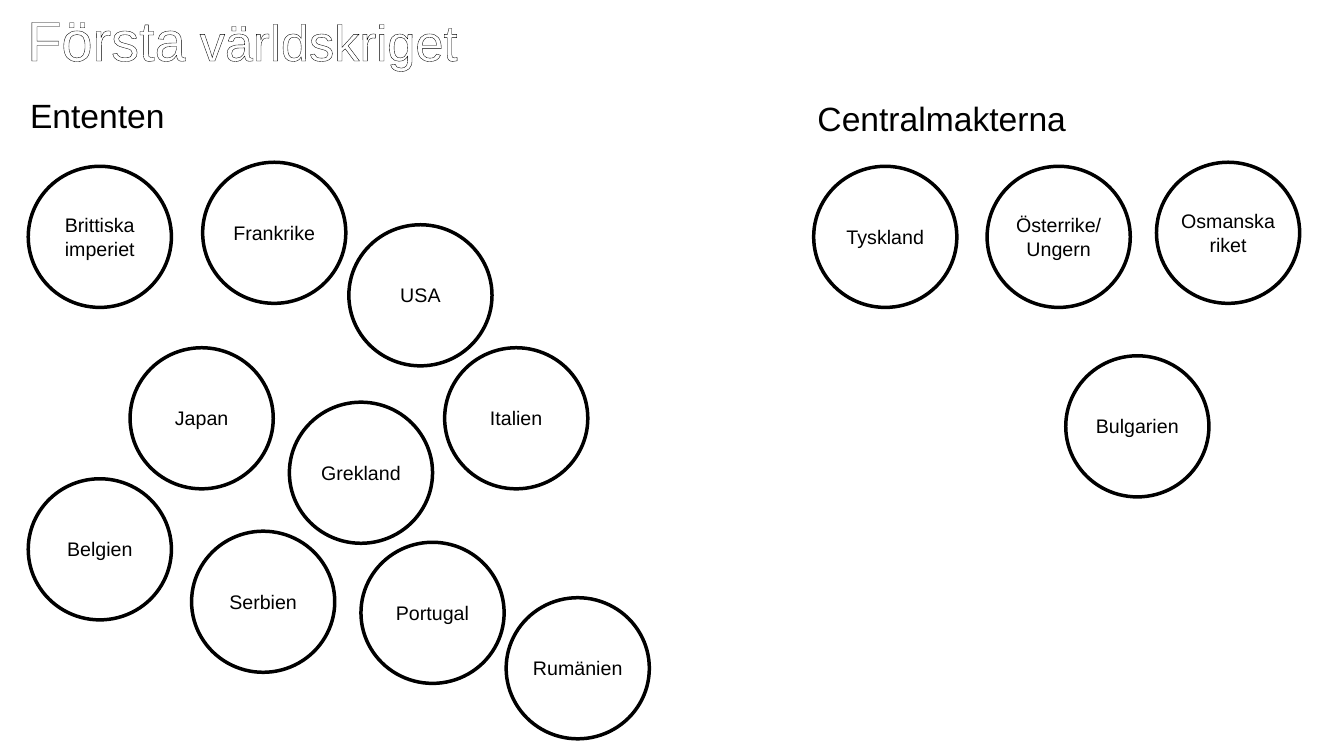
from dataclasses import dataclass

from lxml import etree
from pptx import Presentation
from pptx.dml.color import RGBColor
from pptx.enum.shapes import MSO_SHAPE
from pptx.enum.text import MSO_ANCHOR, MSO_AUTO_SIZE, PP_ALIGN
from pptx.oxml.ns import qn
from pptx.util import Pt

ELLIPSE = MSO_SHAPE.OVAL
TOP = MSO_ANCHOR.TOP
GROW = MSO_AUTO_SIZE.SHAPE_TO_FIT_TEXT
LEFT, CENTER = PP_ALIGN.LEFT, PP_ALIGN.CENTER
EMU_PER_PX = 9144
TITLE_ONLY = 5


@dataclass(frozen=True)
class Theme:
    font: str = "Arial"
    ink: str = "000000"
    paper: str = "FFFFFF"
    title_first: int = 40
    title_rest: int = 36
    heading: int = 24
    label: int = 14
    ring: float = 2.5
    title_outline: float = 0.75


THEME = Theme()
CIRCLE_W, CIRCLE_H = 142, 140
LABEL_HEIGHTS = {1: 34, 2: 57}

HEADINGS = [("Ententen", 20, 89), ("Centralmakterna", 801, 92)]
COUNTRIES = [
    ("Brittiska imperiet", 28, 165, 2),
    ("Frankrike", 201, 161, 1),
    ("USA", 346, 223, 1),
    ("Italien", 441, 345, 1),
    ("Österrike/ Ungern", 979, 165, 2),
    ("Osmanska riket", 1147, 161, 2),
    ("Tyskland", 807, 165, 1),
    ("Bulgarien", 1057, 353, 1),
    ("Rumänien", 502, 593, 1),
    ("Japan", 129, 345, 1),
    ("Serbien", 190, 527, 1),
    ("Grekland", 287, 399, 1),
    ("Belgien", 28, 475, 1),
    ("Portugal", 358, 538, 1),
]


def px(*lengths):
    return [round(n * EMU_PER_PX) for n in lengths]


def format_run(r, size, color):
    r.font.name = THEME.font
    r.font.size = Pt(size)
    r.font.color.rgb = RGBColor.from_string(color)


def outline_run(r):
    ln = etree.Element(qn("a:ln"), w=str(Pt(THEME.title_outline)))
    fill = etree.SubElement(ln, qn("a:solidFill"))
    etree.SubElement(fill, qn("a:srgbClr"), val=THEME.ink)
    r.font._element.insert(0, ln)


def format_frame(tf):
    tf.word_wrap = True
    tf.auto_size = GROW
    tf.vertical_anchor = TOP


def add_title(s):
    sp = s.shapes.title
    sp.left, sp.top, sp.width, sp.height = px(17, 0, 808, 77)
    format_frame(sp.text_frame)
    p = sp.text_frame.paragraphs[0]
    p.alignment = LEFT
    for text, size in (("Första", THEME.title_first),
                       (" världskriget", THEME.title_rest)):
        r = p.add_run()
        r.text = text
        format_run(r, size, THEME.paper)
        outline_run(r)


def add_text(shapes, text, box, size, align):
    tf = shapes.add_textbox(*px(*box)).text_frame
    format_frame(tf)
    tf.text = text
    p = tf.paragraphs[0]
    p.alignment = align
    format_run(p.runs[0], size, THEME.ink)


def add_country(s, name, x, y, lines):
    shapes = s.shapes.add_group_shape().shapes
    sp = shapes.add_shape(ELLIPSE, *px(x, y, CIRCLE_W, CIRCLE_H))
    sp.shadow.inherit = False
    sp.fill.background()
    sp.line.color.rgb = RGBColor.from_string(THEME.ink)
    sp.line.width = Pt(THEME.ring)
    height = LABEL_HEIGHTS[lines]
    box = (x, y + (CIRCLE_H - height) / 2, CIRCLE_W, height)
    add_text(shapes, name, box, THEME.label, CENTER)


def main():
    prs = Presentation()
    prs.slide_width, prs.slide_height = px(1333, 750)
    s = prs.slides.add_slide(prs.slide_layouts[TITLE_ONLY])
    add_title(s)
    for country in COUNTRIES:
        add_country(s, *country)
    for text, x, y in HEADINGS:
        add_text(s.shapes, text, (x, y, 357, 50), THEME.heading, LEFT)
    prs.save("out.pptx")


if __name__ == "__main__":
    main()
